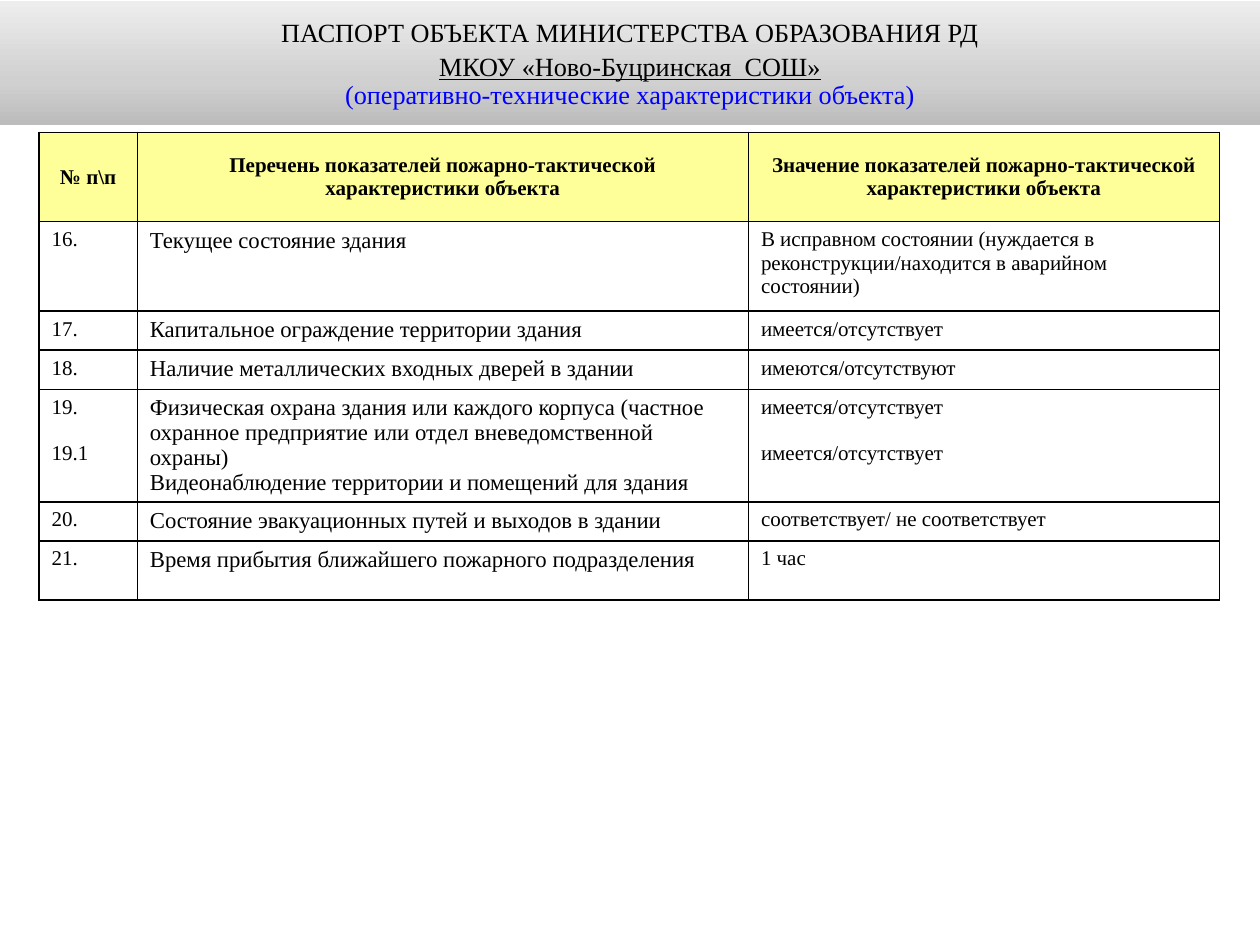
from lxml import etree
from pptx import Presentation
from pptx.dml.color import RGBColor
from pptx.enum.text import MSO_ANCHOR, MSO_AUTO_SIZE, PP_ALIGN
from pptx.oxml.ns import qn
from pptx.util import Inches, Pt

MIDDLE, TOP = MSO_ANCHOR.MIDDLE, MSO_ANCHOR.TOP
CENTER, LEFT = PP_ALIGN.CENTER, PP_ALIGN.LEFT
NO_AUTOFIT = MSO_AUTO_SIZE.NONE

BLACK = RGBColor(0x00, 0x00, 0x00)
BLUE = RGBColor(0x00, 0x00, 0xFF)
WHITE = RGBColor(0xFF, 0xFF, 0xFF)
YELLOW = RGBColor(0xFF, 0xFF, 0x99)
GRADIENT = [
    (0, RGBColor(0xBC, 0xBC, 0xBC)),
    (35, RGBColor(0xD0, 0xD0, 0xD0)),
    (100, RGBColor(0xED, 0xED, 0xED)),
]

FONT = "Times New Roman"
TITLE_FORMAT = {"name": FONT, "size": Pt(15), "bold": False}
HEADER_FORMAT = {"name": FONT, "size": Pt(12), "bold": True}
VALUE_FORMAT = {"name": FONT, "size": Pt(12), "bold": False}
INDICATOR_FORMAT = {"name": FONT, "size": Pt(13), "bold": False}
BODY_FORMATS = [VALUE_FORMAT, INDICATOR_FORMAT, VALUE_FORMAT]

TITLE_LINES = [
    ("ПАСПОРТ ОБЪЕКТА МИНИСТЕРСТВА ОБРАЗОВАНИЯ РД", BLACK, {}, {}),
    ("МКОУ «Ново-Буцринская  СОШ»", BLACK, {"underline": True},
     {"space_before": Pt(1.5)}),
    ("(оперативно-технические характеристики объекта)", BLUE, {},
     {"space_before": Pt(1.5), "line_spacing": 0.8}),
]

COLUMN_WIDTHS = [0.78, 4.85, 3.74]
ROW_HEIGHTS = [0.71, 0.71, 0.31, 0.31, 0.89, 0.31, 0.47]
SPLIT_ROW = 4
SPLIT_GAPS = [Pt(13.3), Pt(0), Pt(13.3)]
ROWS = [
    ("№ п\\п",
     "Перечень показателей пожарно-тактической характеристики объекта",
     "Значение показателей пожарно-тактической характеристики объекта"),
    ("16.", "Текущее состояние здания",
     "В исправном состоянии (нуждается в реконструкции/находится в аварийном состоянии)"),
    ("17.", "Капитальное ограждение территории здания", "имеется/отсутствует"),
    ("18.", "Наличие металлических входных дверей в здании", "имеются/отсутствуют"),
    ("19.\n19.1",
     "Физическая охрана здания или каждого корпуса (частное охранное предприятие "
     "или отдел вневедомственной охраны)\n"
     "Видеонаблюдение территории и помещений для здания",
     "имеется/отсутствует\nимеется/отсутствует"),
    ("20.", "Состояние эвакуационных путей и выходов в здании",
     "соответствует/ не соответствует"),
    ("21.", "Время прибытия ближайшего пожарного подразделения", "1 час"),
]


def apply_format(target, values):
    for name, value in values.items():
        setattr(target, name, value)


def format_paragraph(paragraph, font_format, color, paragraph_format):
    apply_format(paragraph, paragraph_format)
    for run in paragraph.runs:
        apply_format(run.font, font_format)
        run.font.color.rgb = color


def fill_gradient(shape):
    shape.fill.gradient()
    shape.fill.gradient_angle = 90
    stops = next(shape._element.iter(qn("a:gsLst")))
    for stop in list(stops):
        stops.remove(stop)
    for position, color in GRADIENT:
        stop = etree.SubElement(stops, qn("a:gs"), pos=str(position * 1000))
        etree.SubElement(stop, qn("a:srgbClr"), val=str(color))


def add_title(slide):
    title = slide.shapes.title
    apply_format(title, {"left": Inches(0), "top": Inches(0.01),
                         "width": Inches(10), "height": Inches(0.98)})
    fill_gradient(title)
    frame = title.text_frame
    apply_format(frame, {"auto_size": NO_AUTOFIT, "word_wrap": True,
                         "vertical_anchor": MIDDLE,
                         "margin_left": Inches(0.09), "margin_right": Inches(0.09),
                         "margin_top": Inches(0.05), "margin_bottom": Inches(0.05)})
    frame.text = "\n".join(line[0] for line in TITLE_LINES)
    for paragraph, (_, color, extra, spacing) in zip(frame.paragraphs, TITLE_LINES):
        format_paragraph(paragraph, TITLE_FORMAT | extra, color,
                         {"alignment": CENTER} | spacing)


def add_borders(cell):
    properties = cell._tc.get_or_add_tcPr()
    for side in ("a:lnL", "a:lnR", "a:lnT", "a:lnB"):
        line = etree.SubElement(properties, qn(side), w=str(Pt(1)))
        fill = etree.SubElement(line, qn("a:solidFill"))
        etree.SubElement(fill, qn("a:srgbClr"), val=str(BLACK))


def fill_cell(cell, text, font_format, is_header, gap):
    cell.text = text
    add_borders(cell)
    apply_format(cell, {"vertical_anchor": MIDDLE if is_header else TOP,
                        "margin_left": Inches(0.1), "margin_right": Inches(0.1),
                        "margin_top": Inches(0.05), "margin_bottom": Inches(0.05)})
    cell.fill.solid()
    cell.fill.fore_color.rgb = YELLOW if is_header else WHITE
    for index, paragraph in enumerate(cell.text_frame.paragraphs):
        format_paragraph(paragraph, font_format, BLACK,
                         {"alignment": CENTER if is_header else LEFT,
                          "space_before": gap if index else Pt(0)})


def add_indicator_table(slide):
    table = slide.shapes.add_table(
        len(ROWS), len(COLUMN_WIDTHS), Inches(0.31), Inches(1.05),
        Inches(sum(COLUMN_WIDTHS)), Inches(sum(ROW_HEIGHTS))).table
    for column, width in zip(table.columns, COLUMN_WIDTHS):
        column.width = Inches(width)
    for row, height in zip(table.rows, ROW_HEIGHTS):
        row.height = Inches(height)
    for row_index, texts in enumerate(ROWS):
        is_header = row_index == 0
        for column_index, text in enumerate(texts):
            font_format = HEADER_FORMAT if is_header else BODY_FORMATS[column_index]
            gap = SPLIT_GAPS[column_index] if row_index == SPLIT_ROW else Pt(0)
            fill_cell(table.cell(row_index, column_index), text,
                      font_format, is_header, gap)


def main():
    presentation = Presentation()
    presentation.slide_width = Inches(10)
    presentation.slide_height = Inches(7.5)
    slide = presentation.slides.add_slide(presentation.slide_layouts[5])
    add_title(slide)
    add_indicator_table(slide)
    presentation.save("out.pptx")


if __name__ == "__main__":
    main()
